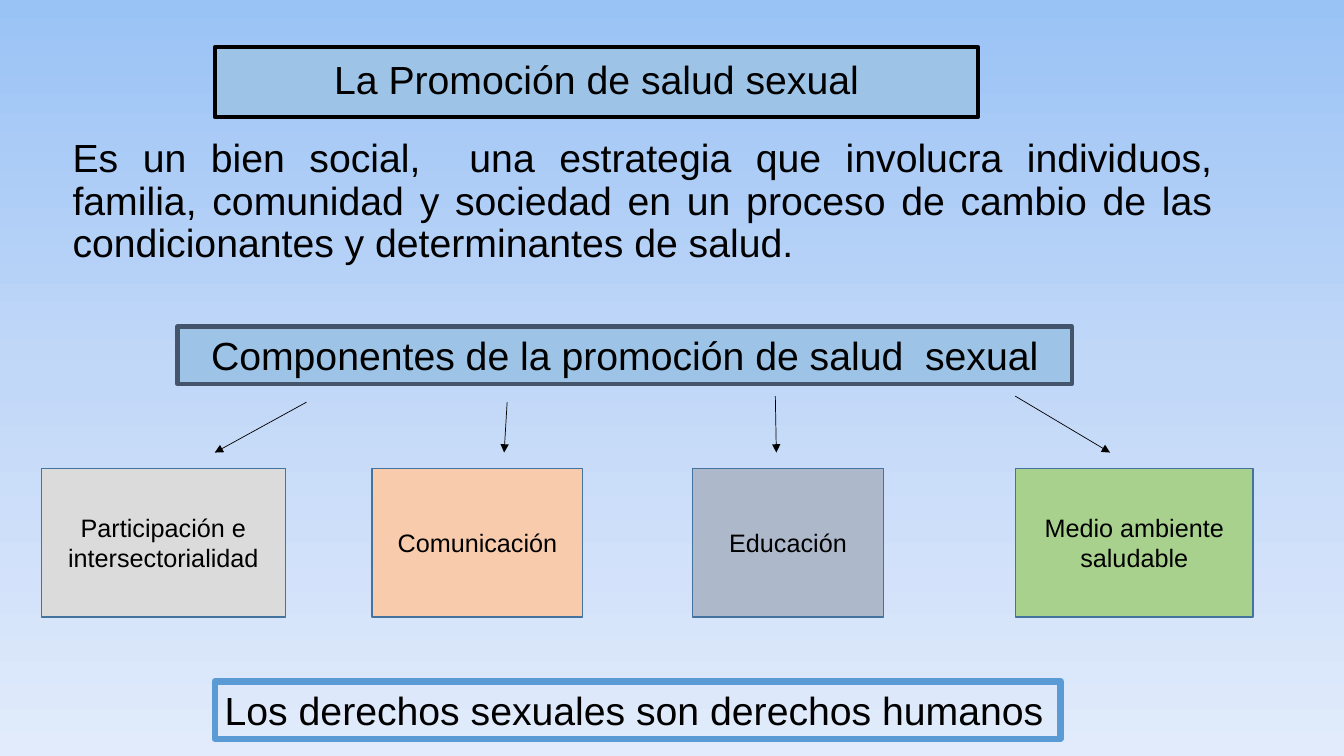
from copy import deepcopy

from pptx import Presentation
from pptx.dml.color import RGBColor
from pptx.enum.shapes import MSO_CONNECTOR, MSO_SHAPE
from pptx.enum.text import MSO_ANCHOR, MSO_AUTO_SIZE, PP_ALIGN
from pptx.oxml.ns import qn
from pptx.util import Inches, Pt

LEFT, MID, JUST = PP_ALIGN.LEFT, PP_ALIGN.CENTER, PP_ALIGN.JUSTIFY
TOP, CENTRE = MSO_ANCHOR.TOP, MSO_ANCHOR.MIDDLE
NO_FIT = MSO_AUTO_SIZE.NONE
RECT, LINE = MSO_SHAPE.RECTANGLE, MSO_CONNECTOR.STRAIGHT

COLORS = {
    "sky": "9AC3F5", "haze": "C2D8F8", "pale": "E1EBFB",
    "ink": "000000", "blue": "9DC3E6", "slate": "44546A",
    "edge": "43739E", "frame": "5B9BD5", "grey": "DBDBDB",
    "peach": "F8CBAD", "steel": "ADB9CA", "green": "A9D18E",
}
PARTS = [
    ("Participación e intersectorialidad", 0.41, 2.42, "grey"),
    ("Comunicación", 3.69, 2.09, "peach"),
    ("Educación", 6.87, 1.89, "steel"),
    ("Medio ambiente saludable", 10.07, 2.36, "green"),
]
ARROWS = [
    (3.04, 3.99, 2.13),
    (5.03, 3.99, 5.0),
    (7.69, 3.93, 7.7),
    (10.07, 3.93, 11.01),
]


def color(name):
    """Return the named colour."""
    return RGBColor.from_string(COLORS[name])


def paint(slide):
    """Fill the background with a vertical three-stop gradient."""
    fill = slide.background.fill
    fill.gradient()
    fill.gradient_angle = 270
    stops = slide.element.find(".//" + qn("a:gsLst"))
    stops.append(deepcopy(stops[0]))
    for i, name in enumerate(("sky", "haze", "pale")):
        stop = fill.gradient_stops[i]
        stop.color.rgb = color(name)
        stop.position = i / 2


def place(shape, left, top, width, height):
    """Move and size a shape in inches."""
    shape.left, shape.top = Inches(left), Inches(top)
    shape.width, shape.height = Inches(width), Inches(height)


def write(shape, text, size=28, align=MID, anchor=TOP):
    """Set and format the text of a shape."""
    frame = shape.text_frame
    frame.text = text
    frame.word_wrap = True
    frame.auto_size = NO_FIT
    frame.vertical_anchor = anchor
    para = frame.paragraphs[0]
    para.alignment = align
    font = para.runs[0].font
    font.size, font.name = Pt(size), "Arial"
    font.color.rgb = color("ink")
    return para


def style(shape, fill, line, width):
    """Fill and outline a shape."""
    if fill:
        shape.fill.solid()
        shape.fill.fore_color.rgb = color(fill)
    else:
        shape.fill.background()
    shape.line.color.rgb = color(line)
    shape.line.width = Pt(width)


def add_title(slide, text):
    """Set the framed title."""
    title = slide.shapes.title
    place(title, 2.13, 0.47, 7.57, 0.69)
    style(title, "blue", "ink", 3)
    write(title, text, anchor=CENTRE).line_spacing = 0.9


def add_body(slide, text):
    """Set the justified definition without a bullet."""
    body = slide.placeholders[1]
    place(body, 0.62, 1.33, 11.5, 1.49)
    para = write(body, text, align=JUST)
    para.line_spacing, para.space_before = 0.9, Pt(10)
    props = para._p.get_or_add_pPr()
    props.set("marL", "0")
    props.set("indent", "0")
    props.append(props.makeelement(qn("a:buNone"), {}))


def add_box(slide, text, area, fill, line, width, **look):
    """Add an outlined box with text."""
    box = slide.shapes.add_shape(RECT, *map(Inches, area))
    box.shadow.inherit = False
    style(box, fill, line, width)
    write(box, text, **look)


def add_arrow(slide, left, top, right, end):
    """Add a thin arrow to a component."""
    ends = map(Inches, (left, top, right, end))
    arrow = slide.shapes.add_connector(LINE, *ends)
    arrow.line.color.rgb = color("ink")
    arrow.line.width = Pt(0.5)
    line = arrow.line._get_or_add_ln()
    line.append(line.makeelement(qn("a:tailEnd"), {"type": "triangle"}))
    props = arrow.element.spPr
    props.append(props.makeelement(qn("a:effectLst"), {}))


def main():
    """Build and save the slide."""
    deck = Presentation()
    deck.slide_width, deck.slide_height = Inches(13.33), Inches(7.5)
    slide = deck.slides.add_slide(deck.slide_layouts[1])
    paint(slide)
    add_title(slide, "La Promoción de salud sexual")
    add_body(slide, "Es un bien social,  una estrategia que involucra "
             "individuos, familia, comunidad y sociedad en un proceso de "
             "cambio de las condicionantes y determinantes de salud.")
    add_box(slide, "Componentes de la promoción de salud  sexual",
            (1.76, 3.24, 8.87, 0.57), "blue", "slate", 3)
    for text, left, width, fill in PARTS:
        add_box(slide, text, (left, 4.65, width, 1.47), fill, "edge", 1,
                size=18, anchor=CENTRE)
    add_box(slide, "Los derechos sexuales son derechos humanos",
            (2.13, 6.76, 8.39, 0.57), None, "frame", 4.5, align=LEFT)
    for left, top, right in ARROWS:
        add_arrow(slide, left, top, right, 4.49)
    deck.save("out.pptx")


if __name__ == "__main__":
    main()
